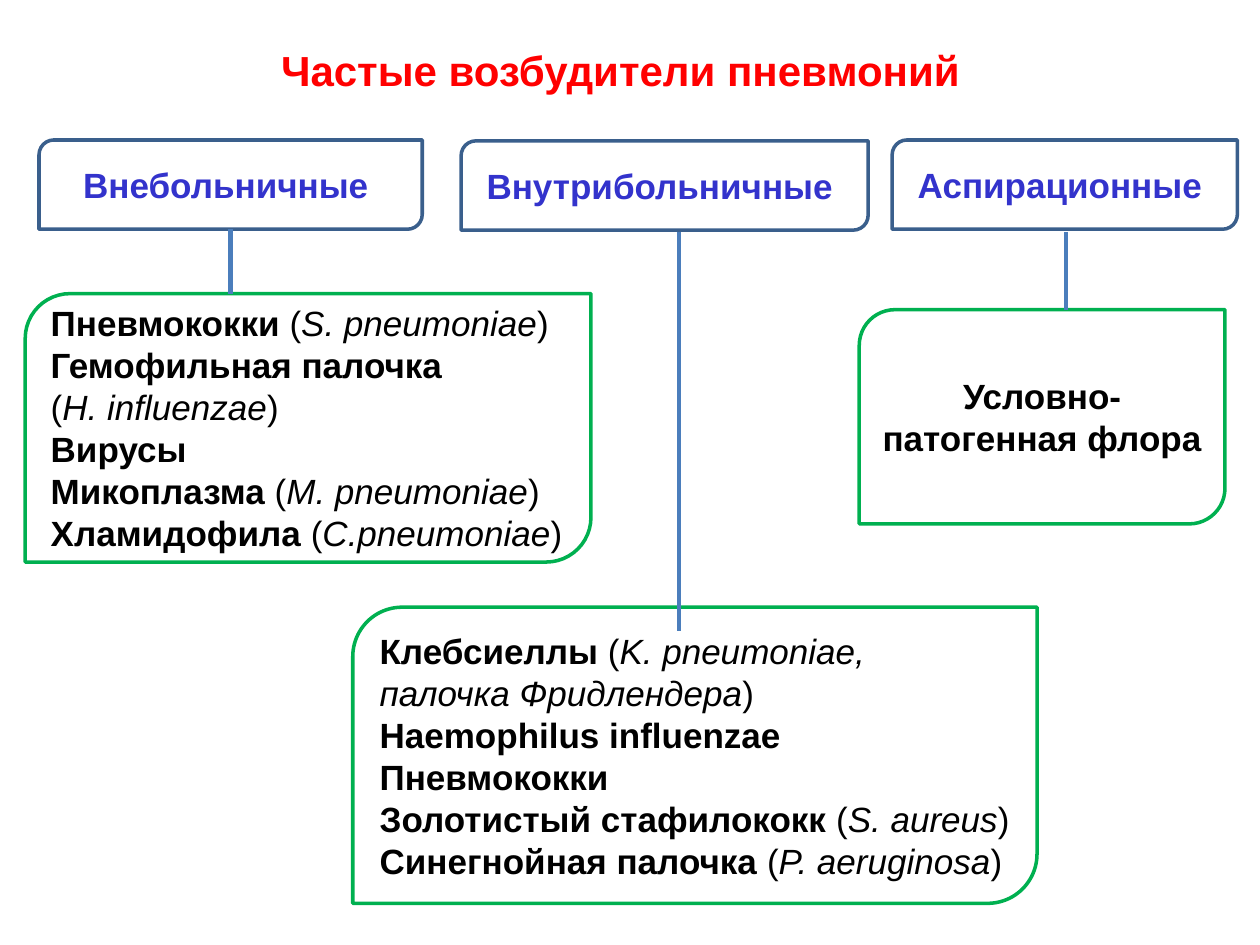
"""Build a slide on the common causative agents of pneumonia."""
import pptx
import pptx.dml.color
import pptx.enum.shapes
import pptx.enum.text
import pptx.oxml
import pptx.oxml.ns
import pptx.util

Pt = pptx.util.Pt
ALIGN = pptx.enum.text.PP_ALIGN
COLORS = {
    "title": "FF0000",
    "heading": "3333CC",
    "heading_border": "3A5F8C",
    "agent": "000000",
    "agent_border": "00B050",
    "connector": "4B7EBC",
    "background": "FFFFFF",
}


def rgb(name):
    return pptx.dml.color.RGBColor.from_string(COLORS[name])


def add_card(slide, box, kind, agents, alignment):
    shape = slide.shapes.add_shape(
        pptx.enum.shapes.MSO_SHAPE.ROUND_2_DIAG_RECTANGLE, *map(Pt, box))
    shape.shadow.inherit = False
    shape.fill.solid()
    shape.fill.fore_color.rgb = rgb("background")
    shape.line.color.rgb = rgb(kind + "_border")
    shape.line.width = Pt(2)
    text_frame = shape.text_frame
    text_frame.word_wrap = True
    text_frame.vertical_anchor = pptx.enum.text.MSO_ANCHOR.MIDDLE
    for index, (name, latin) in enumerate(agents):
        paragraph = text_frame.add_paragraph() if index else text_frame.paragraphs[0]
        paragraph.alignment = alignment
        pieces = [(name, True, False)]
        if latin:
            pieces += [("(", False, False), (latin, False, True), (")", False, False)]
        for text, bold, italic in pieces:
            for line_number, line in enumerate(text.split("\n")):
                if line_number:
                    paragraph.add_line_break()
                if line:
                    run = paragraph.add_run()
                    run.text = line
                    run.font.name = "Arial"
                    run.font.size = Pt(20)
                    run.font.bold = bold
                    run.font.italic = italic
                    run.font.color.rgb = rgb(kind)


presentation = pptx.Presentation()
presentation.slide_width = Pt(720)
presentation.slide_height = Pt(540)
slide = presentation.slides.add_slide(presentation.slide_layouts[6])

title = slide.shapes.add_textbox(Pt(42.5), Pt(21.6), Pt(624), Pt(36))
title.text_frame.word_wrap = True
title.text_frame.vertical_anchor = pptx.enum.text.MSO_ANCHOR.MIDDLE
title.text_frame.text = "Частые возбудители пневмоний"
paragraph = title.text_frame.paragraphs[0]
paragraph.alignment = ALIGN.CENTER
paragraph.font.name = "Arial"
paragraph.font.size = Pt(24)
paragraph.font.bold = True
paragraph.font.color.rgb = rgb("title")

groups = [
    ("Внебольничные ", (22.3, 80, 219, 51), (14.4, 167.8, 323.3, 153.4),
     (131.8, 131, 167.8), ALIGN.LEFT, [
        ("Пневмококки ", "S. pneumoniae"),
        ("Гемофильная палочка \n", "H. influenzae"),
        ("Вирусы", ""),
        ("Микоплазма ", "M. pneumoniae"),
        ("Хламидофила ", "C.pneumoniae"),
    ]),
    ("Внутрибольничные ", (263.5, 80.5, 232.6, 51), (201.6, 347, 391, 169.2),
     (388.1, 132.5, 360.7), ALIGN.LEFT, [
        ("Клебсиеллы ", "K. pneumoniae, \nпалочка Фридлендера"),
        ("Haemophilus influenzae", ""),
        ("Пневмококки", ""),
        ("Золотистый стафилококк ", "S. aureus"),
        ("Синегнойная палочка ", "P. aeruginosa"),
    ]),
    ("Аспирационные ", (509.8, 80, 197.3, 51), (491, 177, 209, 122.4),
     (609.1, 132.5, 177), ALIGN.CENTER, [
        ("Условно-патогенная флора", ""),
    ]),
]
for heading, heading_box, agent_box, (x, top, bottom), alignment, agents in groups:
    add_card(slide, heading_box, "heading", [(heading, "")], ALIGN.CENTER)
    add_card(slide, agent_box, "agent", agents, alignment)
    connector = slide.shapes.add_connector(
        pptx.enum.shapes.MSO_CONNECTOR.STRAIGHT, Pt(x), Pt(top), Pt(x), Pt(bottom))
    connector.line.color.rgb = rgb("connector")
    connector.line.width = Pt(2.5)
    properties = connector._element.spPr
    properties.append(pptx.oxml.parse_xml(
        "<a:effectLst %s/>" % pptx.oxml.ns.nsdecls("a")))

presentation.save("out.pptx")
